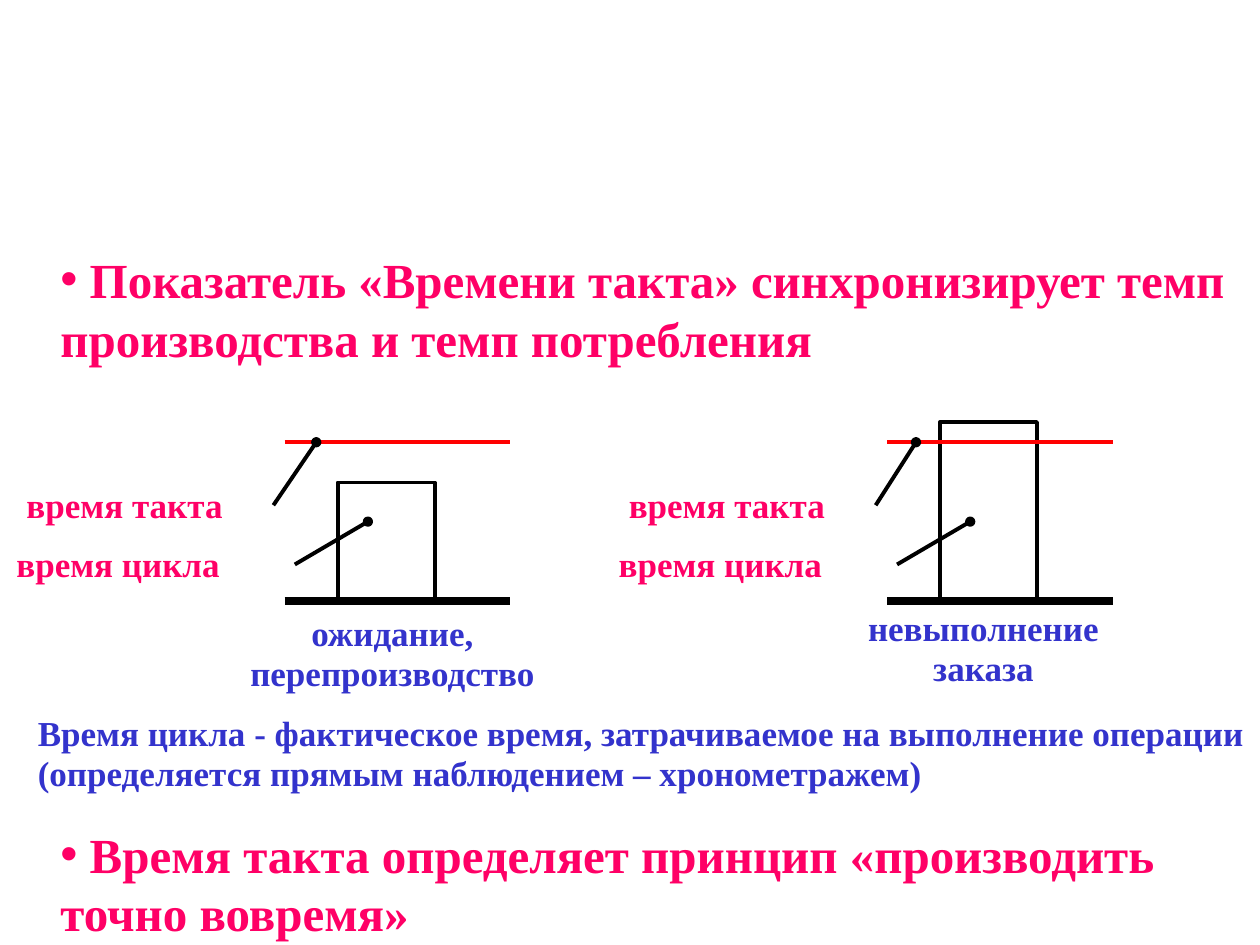
from dataclasses import dataclass

import pptx
import pptx.dml.color
import pptx.enum.shapes
import pptx.enum.text
import pptx.oxml.ns
import pptx.util
from lxml import etree
from pptx.util import Inches

RGBColor = pptx.dml.color.RGBColor
PINK = RGBColor(0xFF, 0x00, 0x66)
BLUE = RGBColor(0x33, 0x33, 0xCC)
RED = RGBColor(0xFF, 0x00, 0x00)
BLACK = RGBColor(0x00, 0x00, 0x00)
FONT = "Times New Roman"
ALIGN = pptx.enum.text.PP_ALIGN
SHAPE = pptx.enum.shapes.MSO_SHAPE
BASELINE = 4.77
TAKT_LEVEL = 3.51
DOT_SIZE = 0.05


@dataclass
class Bullet:
    text: str
    top: float


@dataclass
class Diagram:
    left: float
    bar_height: float
    takt_dot: float
    caption: str
    caption_left: float
    caption_top: float


BULLETS = [
    Bullet(" Показатель «Времени такта» синхронизирует темп производства и темп потребления", 1.93),
    Bullet(" Время такта определяет принцип «производить точно вовремя»", 6.49),
]
DIAGRAMS = [
    Diagram(0.04, 0.94, 2.47, "ожидание, перепроизводство", 1.75, 4.81),
    Diagram(4.82, 1.42, 2.45, "невыполнение заказа", 6.44, 4.77),
]


def style_paragraph(paragraph, size: float, color: RGBColor) -> None:
    paragraph.font.name = FONT
    paragraph.font.size = pptx.util.Pt(size)
    paragraph.font.bold = True
    paragraph.font.color.rgb = color


def fill_bullet(placeholder, bullet: Bullet) -> None:
    placeholder.left, placeholder.top = Inches(0.38), Inches(bullet.top)
    placeholder.width, placeholder.height = Inches(9.73), Inches(1.04)
    frame = placeholder.text_frame
    frame.text = bullet.text
    frame.auto_size = pptx.enum.text.MSO_AUTO_SIZE.NONE
    paragraph = frame.paragraphs[0]
    paragraph.space_before = pptx.util.Pt(0)
    properties = paragraph._p.get_or_add_pPr()
    properties.set("marL", "0")
    properties.set("indent", "0")
    etree.SubElement(properties, pptx.oxml.ns.qn("a:buChar")).set("char", "•")
    style_paragraph(paragraph, 28, PINK)


def add_text(slide, text: str, left: float, top: float, width: float, height: float,
             color: RGBColor, alignment=ALIGN.LEFT) -> None:
    frame = slide.shapes.add_textbox(
        Inches(left), Inches(top), Inches(width), Inches(height)).text_frame
    frame.word_wrap = True
    frame.margin_left = frame.margin_right = Inches(0.09)
    frame.margin_top, frame.margin_bottom = Inches(0.07), Inches(0.05)
    frame.text = text
    paragraph = frame.paragraphs[0]
    paragraph.alignment = alignment
    paragraph.line_spacing = 0.95
    style_paragraph(paragraph, 20, color)


def add_line(slide, start: tuple[float, float], end: tuple[float, float],
             color: RGBColor = BLACK, width: float = 2.25) -> None:
    connector = slide.shapes.add_connector(
        pptx.enum.shapes.MSO_CONNECTOR.STRAIGHT, *map(Inches, start + end))
    connector.line.color.rgb = color
    connector.line.width = pptx.util.Pt(width)
    etree.SubElement(connector._element.spPr, pptx.oxml.ns.qn("a:effectLst"))


def add_outline(slide, kind, left: float, top: float, width: float, height: float):
    shape = slide.shapes.add_shape(
        kind, Inches(left), Inches(top), Inches(width), Inches(height))
    shape.shadow.inherit = False
    shape.fill.background()
    shape.line.color.rgb = BLACK
    shape.line.width = pptx.util.Pt(2.25)
    return shape


def add_pointer(slide, start: tuple[float, float], end: tuple[float, float]) -> None:
    add_line(slide, start, end)
    x, y = end
    dot = add_outline(slide, SHAPE.OVAL, x - DOT_SIZE / 2, y - DOT_SIZE / 2, DOT_SIZE, DOT_SIZE)
    dot.fill.solid()
    dot.fill.fore_color.rgb = BLACK


def add_diagram(slide, diagram: Diagram) -> None:
    left = diagram.left
    line_start, line_end = left + 2.22, left + 4.01
    add_line(slide, (line_start, BASELINE), (line_end, BASELINE), width=4.5)
    add_outline(slide, SHAPE.RECTANGLE, left + 2.64, BASELINE - diagram.bar_height,
                0.77, diagram.bar_height)
    add_text(slide, "время цикла", left, 4.26, 2.3, 0.43, PINK)
    add_line(slide, (line_start, TAKT_LEVEL), (line_end, TAKT_LEVEL), RED)
    add_pointer(slide, (left + 2.3, 4.48), (left + 2.88, 4.14))
    add_text(slide, "время такта", left + 0.08, 3.79, 2.05, 0.43, PINK)
    add_pointer(slide, (left + 2.13, 4.01), (left + diagram.takt_dot, TAKT_LEVEL))


def main() -> None:
    presentation = pptx.Presentation()
    presentation.slide_width, presentation.slide_height = Inches(10), Inches(7.5)
    slide = presentation.slides.add_slide(presentation.slide_layouts.get_by_name("Two Content"))
    title, *bodies = list(slide.placeholders)[:3]
    title._element.getparent().remove(title._element)
    for placeholder, bullet in zip(bodies, BULLETS):
        fill_bullet(placeholder, bullet)
    for diagram in DIAGRAMS:
        add_diagram(slide, diagram)
    for diagram in DIAGRAMS:
        add_text(slide, diagram.caption, diagram.caption_left, diagram.caption_top,
                 2.73, 0.75, BLUE, ALIGN.CENTER)
    add_text(slide, "Время цикла - фактическое время, затрачиваемое на выполнение операции "
             "(определяется прямым наблюдением – хронометражем)", 0.21, 5.6, 9.81, 0.75, BLUE)
    presentation.save("out.pptx")


if __name__ == "__main__":
    main()
